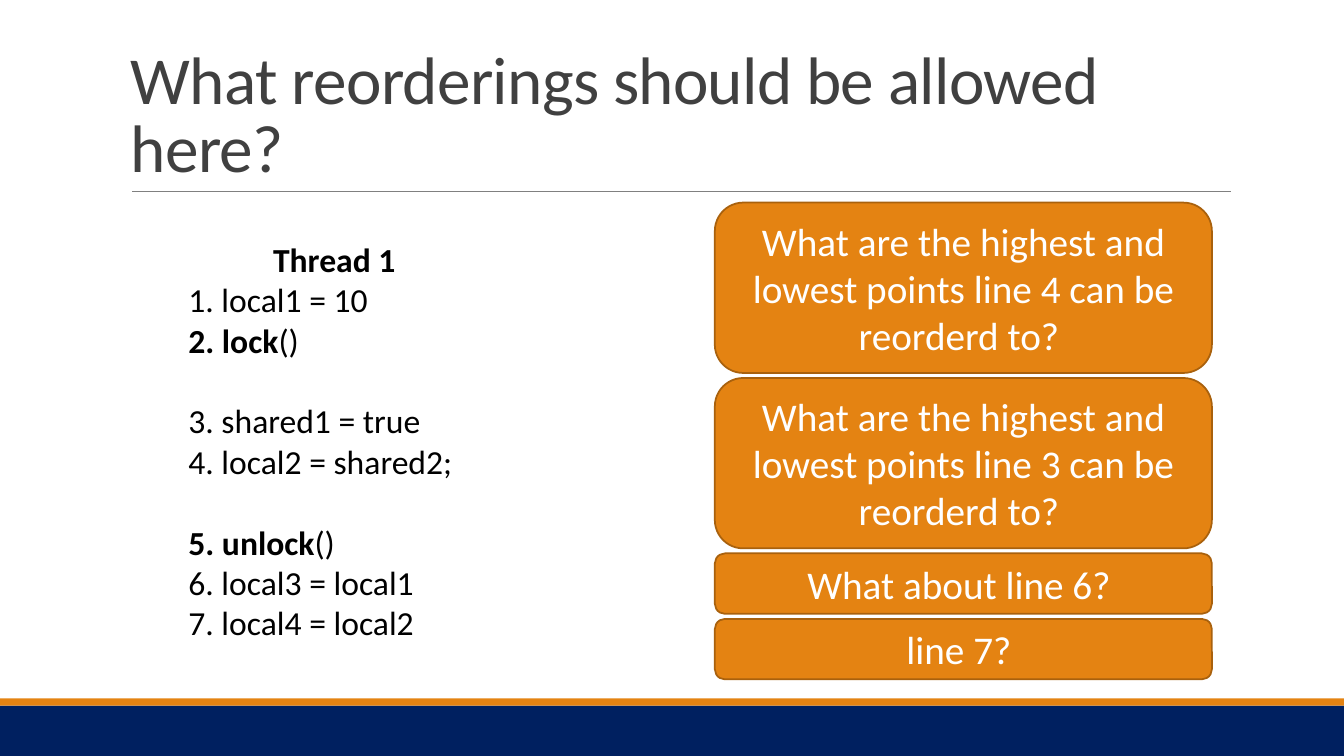
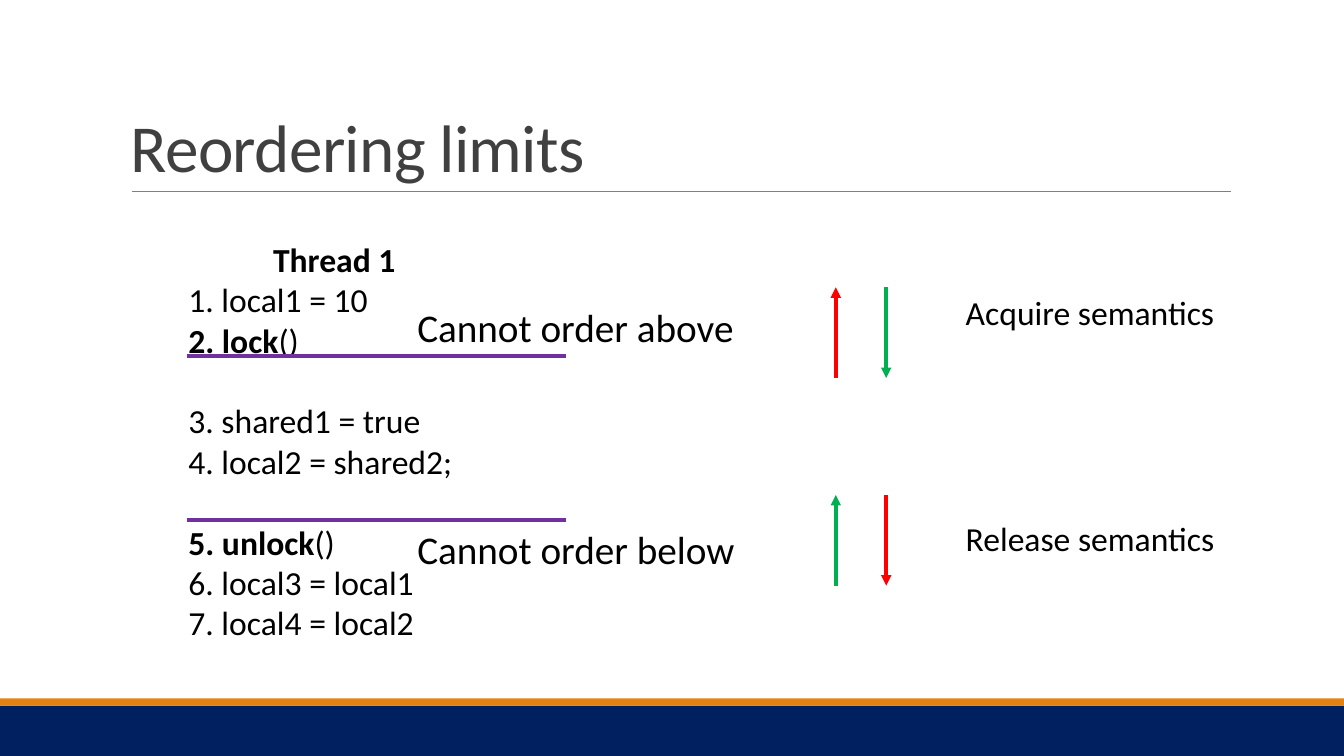
from lxml import etree
from pptx import Presentation
from pptx import util as u
from pptx.dml.color import RGBColor
from pptx.enum import shapes, text
from pptx.oxml.ns import qn

PX = 9144
FONT = "Calibri"
NAVY, ORANGE, ORANGE_EDGE = "002060", "E48312", "A9610D"
BLACK, WHITE, TITLE_GREY, RULE_GREY = "000000", "FFFFFF", "404040", "808080"
PURPLE, GREEN, RED = "7030A0", "00B050", "FF0000"
CODE_LINE = 29
CODE = [
    ("", "1. local1 = 10", 0),
    ("2. lock", "()", 0),
    ("", "3. shared1 = true", CODE_LINE),
    ("", "4. local2 = shared2;", 0),
    ("5. unlock", "()", CODE_LINE),
    ("", "6. local3 = local1", 0),
    ("", "7. local4 = local2", 0),
]
QUESTIONS = [
    ("What are the highest and lowest points line 4 can be reorderd to? ", 169),
    ("What are the highest and lowest points line 3 can be reorderd to? ", 169),
    ("What about line 6? ", 60),
    ("line 7? ", 60),
]


def px(*lengths):
    """Turn pixel lengths into EMU."""
    return [u.Emu(length * PX) for length in lengths]


def rgb(value):
    """Turn a hex string into a colour."""
    return RGBColor.from_string(value)


def write(paragraph, words, size=24, color=BLACK, bold=False, align=None,
          before=0, line=None, spacing=None):
    """Add a formatted run to a paragraph."""
    if align is not None:
        paragraph.alignment = align
    if before:
        paragraph.space_before = u.Pt(before)
    if line:
        paragraph.line_spacing = line
    run = paragraph.add_run()
    run.text = words
    run.font.name = FONT
    run.font.size = u.Pt(size)
    run.font.bold = bold
    run.font.color.rgb = rgb(color)
    if spacing:
        run.font._element.set("spc", str(spacing))


def add_box(slide, box, anchor=text.MSO_ANCHOR.TOP):
    """Add a wrapping text box and return its text frame."""
    frame = slide.shapes.add_textbox(*px(*box)).text_frame
    frame.word_wrap = True
    frame.vertical_anchor = anchor
    return frame


def add_label(slide, box, words, **style):
    """Add a text box holding one line of text."""
    write(add_box(slide, box).paragraphs[0], words, **style)


def add_filled(slide, kind, box, fill, edge=None):
    """Add a filled preset shape with an optional outline."""
    shape = slide.shapes.add_shape(kind, *px(*box))
    shape.shadow.inherit = False
    shape.fill.solid()
    shape.fill.fore_color.rgb = rgb(fill)
    if edge:
        shape.line.color.rgb = rgb(edge)
        shape.line.width = u.Pt(1.25)
    else:
        shape.line.fill.background()
    return shape


def add_line(slide, start, end, color, width, arrow=False):
    """Add a straight line, with an arrowhead at its end if asked."""
    connector = slide.shapes.add_connector(
        shapes.MSO_CONNECTOR.STRAIGHT, *px(*start, *end))
    connector.line.color.rgb = rgb(color)
    connector.line.width = u.Pt(width)
    if arrow:
        outline = connector.line._get_or_add_ln()
        etree.SubElement(outline, qn("a:tailEnd"), type="triangle")
    etree.SubElement(connector._element.spPr, qn("a:effectLst"))


def add_base(presentation, title):
    """Add a blank slide with the footer bands, title and title rule."""
    slide = presentation.slides.add_slide(presentation.slide_layouts[6])
    rectangle = shapes.MSO_SHAPE.RECTANGLE
    add_filled(slide, rectangle, (0, 700, 1333, 50), NAVY)
    add_filled(slide, rectangle, (0, 693, 1333, 7), ORANGE)
    add_line(slide, (131, 190), (1221, 190), RULE_GREY, 0.5)
    frame = add_box(slide, (120, 31, 1100, 159), text.MSO_ANCHOR.BOTTOM)
    write(frame.paragraphs[0], title, size=48, color=TITLE_GREY, line=0.85, spacing=-50)
    return slide


def add_code(slide, box):
    """List the statements of the thread under a centred heading."""
    frame = add_box(slide, box)
    write(frame.paragraphs[0], "Thread 1", bold=True, align=text.PP_ALIGN.CENTER)
    for strong, plain, before in CODE:
        paragraph = frame.add_paragraph()
        if strong:
            write(paragraph, strong, bold=True, before=before)
        write(paragraph, plain, before=before)


def add_questions(slide, left, top, width, gap=5):
    """Stack the question cards downwards with equal gaps."""
    for question, height in QUESTIONS:
        card = add_filled(slide, shapes.MSO_SHAPE.ROUNDED_RECTANGLE,
                          (left, top, width, height), ORANGE, ORANGE_EDGE)
        card.text_frame.word_wrap = True
        card.text_frame.vertical_anchor = text.MSO_ANCHOR.MIDDLE
        write(card.text_frame.paragraphs[0], question, size=28, color=WHITE,
              align=text.PP_ALIGN.CENTER)
        top += height + gap


def add_limit(slide, left, top, words, label_top):
    """Draw a reordering barrier and its label."""
    add_line(slide, (left, top), (left + 376, top), PURPLE, 3)
    add_label(slide, (left + 219, label_top, 342, 57), words, size=28)


def add_directions(slide, left, top, up_color, down_color, words, label_top):
    """Draw an up and a down arrow and the name of their semantics."""
    right, bottom = left + 50, top + 90
    add_line(slide, (left, bottom), (left, top), up_color, 2.5, arrow=True)
    add_line(slide, (right, top), (right, bottom), down_color, 2.5, arrow=True)
    add_label(slide, (left + 119, label_top, 325, 50), words)


def build_question_slide(presentation):
    """Build the slide that asks about allowed reorderings."""
    slide = add_base(presentation, "What reorderings should be allowed here?")
    add_code(slide, (177, 232, 309, 414))
    add_questions(slide, 709, 201, 493)


def build_limits_slide(presentation):
    """Build the slide that shows the limits of reordering."""
    slide = add_base(presentation, "Reordering limits")
    add_code(slide, (177, 232, 309, 414))
    add_limit(slide, 185, 353, "Cannot order above", 296)
    add_limit(slide, 185, 516, "Cannot order below", 516)
    add_directions(slide, 829, 285, RED, GREEN, "Acquire semantics", 285)
    add_directions(slide, 829, 491, GREEN, RED, "Release semantics", 509)


def main():
    """Build and save the presentation."""
    presentation = Presentation()
    presentation.slide_width, presentation.slide_height = u.Inches(13.33), u.Inches(7.5)
    build_question_slide(presentation)
    build_limits_slide(presentation)
    presentation.save("out.pptx")


if __name__ == "__main__":
    main()
